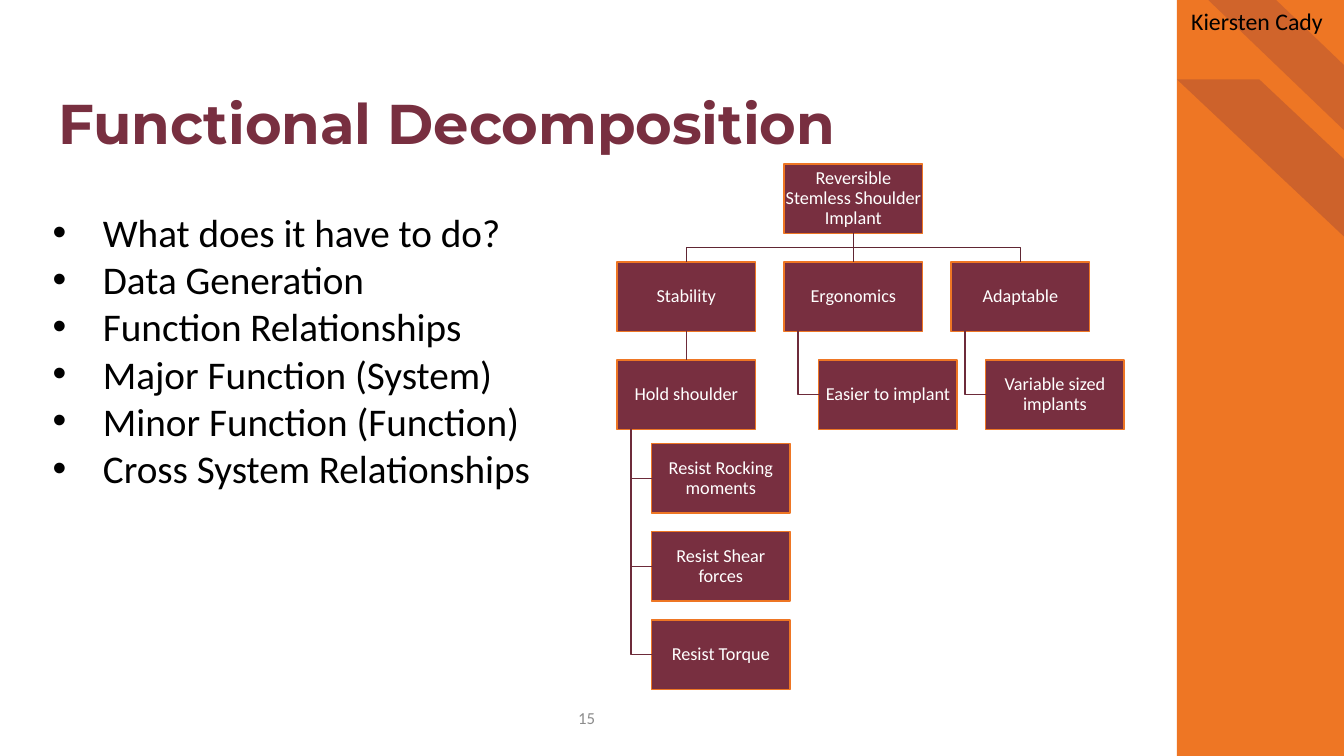
"""Build the Functional Decomposition slide with its function tree."""
from lxml import etree
from pptx import Presentation
from pptx.dml.color import RGBColor
from pptx.enum import shapes, text
from pptx.oxml import ns
from pptx.util import Cm, Pt

COLORS = {"orange": "EE7624", "garnet": "782F40", "branch": "602633", "twig": "6D2B3A",
          "white": "FFFFFF", "black": "000000", "gray": "8C8C8C"}


def write(tf, lines, size, color, font="Calibri", bold=False, align=text.PP_ALIGN.LEFT,
          anchor=text.MSO_ANCHOR.TOP, spacing=1.0, margin=None, bullet=None):
    """Fill a text frame with one paragraph per line."""
    tf.word_wrap = True
    tf.auto_size = text.MSO_AUTO_SIZE.NONE
    tf.vertical_anchor = anchor
    if margin is not None:
        tf.margin_left = tf.margin_right = tf.margin_top = tf.margin_bottom = margin
    for i, line in enumerate(lines.split("\n")):
        p = tf.paragraphs[0] if i == 0 else tf.add_paragraph()
        p.alignment, p.line_spacing, p.space_before = align, spacing, Pt(0)
        if bullet:
            pPr = p._p.get_or_add_pPr()
            pPr.set("marL", str(Cm(1.27)))
            pPr.set("indent", str(-Cm(1.27)))
            etree.SubElement(pPr, ns.qn("a:buChar")).set("char", bullet)
        r = p.add_run()
        r.text = line
        r.font.name, r.font.size, r.font.bold = font, Pt(size), bold
        r.font.color.rgb = RGBColor.from_string(COLORS[color])


def style(s, fill=None, line=None):
    """Set fill and line by colour name, without shadow."""
    s.shadow.inherit = False
    for part, color in ((s.fill, fill), (s.line.fill, line)):
        if color:
            part.solid()
            part.fore_color.rgb = RGBColor.from_string(COLORS[color])
        else:
            part.background()
    if line:
        s.line.width = Pt(1)


prs = Presentation()
prs.slide_width, prs.slide_height = Cm(33.87), Cm(19.05)
slide = prs.slides.add_slide(prs.slide_layouts[1])
sp = slide.shapes

band = sp.add_shape(shapes.MSO_SHAPE.RECTANGLE, Cm(29.66), 0, Cm(4.21), Cm(19.05))
style(band, "orange")
for x, y, w, h, adj, opacity in ((29.66, 2, 4.21, 3.96, 0.507, 28),
                                 (30.45, 0, 3.42, 3.28, 0.5, 25)):
    stripe = sp.add_shape(shapes.MSO_SHAPE.DIAGONAL_STRIPE, Cm(x), Cm(y), Cm(w), Cm(h))
    stripe.adjustments[0] = adj
    stripe._element.spPr.xfrm.set("flipH", "1")
    style(stripe, "garnet")
    clr = stripe._element.spPr.find(".//" + ns.qn("a:srgbClr"))
    etree.SubElement(clr, ns.qn("a:alpha")).set("val", str(opacity * 1000))

title = sp.title
title.left, title.top, title.width, title.height = Cm(1.47), Cm(1.27), Cm(26.67), Cm(2.67)
write(title.text_frame, "Functional Decomposition", 40, "garnet", font="Montserrat", bold=True,
      anchor=text.MSO_ANCHOR.BOTTOM, spacing=0.9, margin=0)

body = slide.placeholders[1]
body.left, body.top, body.width, body.height = Cm(1.07), Cm(5.13), Cm(13.2), Cm(8.64)
write(body.text_frame, """What does it have to do?
Data Generation
Function Relationships
Major Function (System)
Minor Function (Function)
Cross System Relationships""", 28, "black", bullet="•")

BOX_W, BOX_H = Cm(3.49), Cm(1.75)
INDENT, STEM = Cm(0.87), Cm(0.35)
cols = [Cm(15.55 + 4.21 * i) for i in range(3)]
rows = [Cm(4.13 + 2.47 * i) for i in range(3)]
resist_rows = [Cm(11.18 + 2.22 * i) for i in range(3)]
nodes = [
    ("Reversible Stemless Shoulder Implant", cols[1], rows[0]),
    ("Stability", cols[0], rows[1]),
    ("Hold shoulder", cols[0], rows[2]),
    ("Resist Rocking moments", cols[0] + INDENT, resist_rows[0]),
    ("Resist Shear forces", cols[0] + INDENT, resist_rows[1]),
    ("Resist Torque", cols[0] + INDENT, resist_rows[2]),
    ("Ergonomics", cols[1], rows[1]),
    ("Easier to implant", cols[1] + INDENT, rows[2]),
    ("Adaptable", cols[2], rows[1]),
    ("Variable sized implants", cols[2] + INDENT, rows[2]),
]
boxes = {}
for label, x, y in nodes:
    s = sp.add_shape(shapes.MSO_SHAPE.RECTANGLE, x, y, BOX_W, BOX_H)
    style(s, "garnet", "orange")
    write(s.text_frame, label, 13, "white", align=text.PP_ALIGN.CENTER,
          anchor=text.MSO_ANCHOR.MIDDLE, spacing=0.9, margin=Cm(0.02))
    boxes[label] = s

root = boxes["Reversible Stemless Shoulder Implant"]
for parent, child, color in ((root, boxes["Ergonomics"], "branch"),
                             (boxes["Stability"], boxes["Hold shoulder"], "twig")):
    c = sp.add_connector(shapes.MSO_CONNECTOR.STRAIGHT, 0, 0, 0, 0)
    c.begin_connect(parent, 2)
    c.end_connect(child, 0)
    c.line.width = Pt(1)
    c.line.color.rgb = RGBColor.from_string(COLORS[color])
    etree.SubElement(c._element.spPr, ns.qn("a:effectLst"))

elbows = []
for name in ("Stability", "Adaptable"):
    child = boxes[name]
    x0, x1 = root.left + BOX_W // 2, child.left + BOX_W // 2
    y0 = root.top + BOX_H
    mid = (y0 + child.top) // 2
    elbows.append(("branch", [(x0, y0), (x0, mid), (x1, mid), (x1, child.top)]))
for parent, name in (("Hold shoulder", "Resist Rocking moments"),
                     ("Hold shoulder", "Resist Shear forces"),
                     ("Hold shoulder", "Resist Torque"),
                     ("Ergonomics", "Easier to implant"),
                     ("Adaptable", "Variable sized implants")):
    s, child = boxes[parent], boxes[name]
    x, y = s.left + STEM, child.top + BOX_H // 2
    elbows.append(("twig", [(x, s.top + BOX_H), (x, y), (child.left, y)]))
for color, points in elbows:
    fb = sp.build_freeform(*points[0])
    fb.add_line_segments(points[1:], close=False)
    style(fb.convert_to_shape(), line=color)

number = sp.add_textbox(Cm(13.77), Cm(17.7), Cm(2.03), Cm(0.76))
write(number.text_frame, "15", 12, "gray", align=text.PP_ALIGN.CENTER,
      anchor=text.MSO_ANCHOR.MIDDLE)
speaker = sp.add_textbox(Cm(29.77), Cm(0.05), Cm(3.99), Cm(1.7))
write(speaker.text_frame, "Kiersten Cady", 17, "black")

prs.save("out.pptx")
